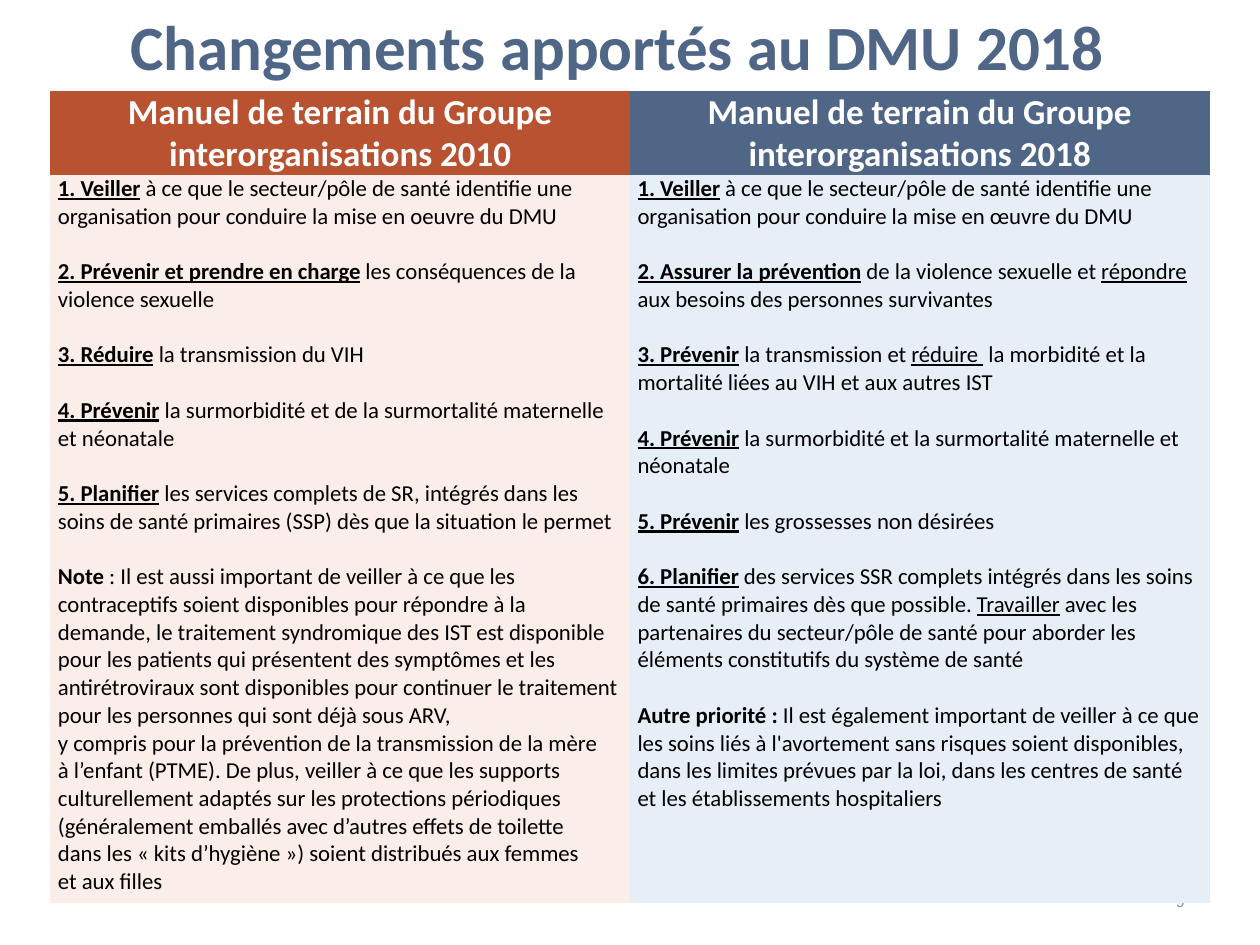
from dataclasses import dataclass

from pptx import Presentation
from pptx import util as u
from pptx.dml import color
from pptx.enum import text

TITLE = "Changements apportés au DMU 2018"
PAGE_NUMBER = "9"
PLAIN, BOLD, UNDERLINED, KEY = (False, False), (True, False), (False, True), (True, True)

COLUMNS = [
    {
        "heading": "Manuel de terrain du Groupe interorganisations 2010",
        "dark": "B85231",
        "light": "FBEDE7",
        "objectives": [
            [("1. Veiller", KEY), (" à ce que le secteur/pôle de santé identifie une organisation "
                                   "pour conduire la mise en oeuvre du DMU", PLAIN)],
            [("2. Prévenir et prendre en charge", KEY),
             (" les conséquences de la violence sexuelle", PLAIN)],
            [("3. Réduire", KEY), (" la transmission du VIH", PLAIN)],
            [("4. Prévenir", KEY),
             (" la surmorbidité et de la surmortalité maternelle et néonatale", PLAIN)],
            [("5. Planifier", KEY), (" les services complets de SR, intégrés dans les soins de santé "
                                     "primaires (SSP) dès que la situation le permet", PLAIN)],
            [("Note ", BOLD),
             (": Il est aussi important de veiller à ce que les contraceptifs soient disponibles "
              "pour répondre à la demande, le traitement syndromique des IST est disponible pour "
              "les patients qui présentent des symptômes et les antirétroviraux sont disponibles "
              "pour continuer le traitement pour les personnes qui sont déjà sous ARV, \n"
              "y compris pour la prévention de la transmission de la mère \n"
              "à l’enfant (PTME). De plus, veiller à ce que les supports culturellement adaptés "
              "sur les protections périodiques (généralement emballés avec d’autres effets de "
              "toilette \ndans les « kits d’hygiène ») soient distribués aux femmes \n"
              "et aux filles", PLAIN)],
        ],
    },
    {
        "heading": "Manuel de terrain du Groupe interorganisations 2018",
        "dark": "506687",
        "light": "E6EFF8",
        "objectives": [
            [("1. Veiller", KEY), (" à ce que le secteur/pôle de santé identifie une organisation "
                                   "pour conduire la mise en œuvre du DMU", PLAIN)],
            [("2. Assurer la prévention", KEY), (" de la violence sexuelle et ", PLAIN),
             ("répondre", UNDERLINED), (" aux besoins des personnes survivantes", PLAIN)],
            [("3. Prévenir", KEY), (" la transmission et ", PLAIN), ("réduire ", UNDERLINED),
             (" la morbidité et la mortalité liées au VIH et aux autres IST", PLAIN)],
            [("4. Prévenir", KEY),
             (" la surmorbidité et la surmortalité maternelle et néonatale", PLAIN)],
            [("5. Prévenir", KEY), (" les grossesses non désirées", PLAIN)],
            [("6. Planifier", KEY), (" des services SSR complets intégrés dans les soins de santé "
                                     "primaires dès que possible. ", PLAIN),
             ("Travailler", UNDERLINED), (" avec les partenaires du secteur/pôle de santé pour "
                                          "aborder les éléments constitutifs du système de santé", PLAIN)],
            [("Autre priorité : ", BOLD),
             ("Il est également important de veiller à ce que les soins liés à l'avortement sans "
              "risques soient disponibles, dans les limites prévues par la loi, dans les centres "
              "de santé et les établissements hospitaliers", PLAIN)],
        ],
    },
]


@dataclass(frozen=True)
class Theme:
    font: str = "Calibri"
    number_font: str = "Arial"
    title: str = "506687"
    heading: str = "FFFFFF"
    body: str = "000000"
    number: str = "888888"
    title_size: float = 36
    heading_size: float = 20
    body_size: float = 13
    number_size: float = 9
    paragraph_gap: float = 15.85
    plain_table_style: str = "{2D5ABB26-0587-4C30-8999-92F81FD0307C}"


THEME = Theme()
WIDTH, HEIGHT = u.Inches(10), u.Inches(7.5)
MARGIN = int(WIDTH * 0.04)
TITLE_HEIGHT = u.Inches(0.72)
TABLE_WIDTH = WIDTH - 2 * MARGIN
ROW_HEIGHTS = [u.Inches(0.65), u.Inches(5.78)]


def format_paragraph(paragraph, size, hex_color, alignment, bold=False, font=THEME.font):
    paragraph.alignment = alignment
    paragraph.font.name = font
    paragraph.font.size = u.Pt(size)
    paragraph.font.bold = bold
    paragraph.font.color.rgb = color.RGBColor.from_string(hex_color)


def add_runs(paragraph, runs):
    for content, (bold, underline) in runs:
        for index, line in enumerate(content.split("\n")):
            if index:
                paragraph.add_line_break()
            run = paragraph.add_run()
            run.text = line
            if bold:
                run.font.bold = True
            if underline:
                run.font.underline = True


def prepare_cell(cell, fill):
    cell.fill.solid()
    cell.fill.fore_color.rgb = color.RGBColor.from_string(fill)
    cell.margin_left = cell.margin_right = u.Inches(0.06)
    cell.margin_top = cell.margin_bottom = 0
    return cell.text_frame


def add_title(slide):
    title = slide.shapes.title
    title.left, title.top, title.width, title.height = MARGIN, 0, u.Inches(9), TITLE_HEIGHT
    title.text_frame.text = TITLE
    title.text_frame.vertical_anchor = text.MSO_ANCHOR.MIDDLE
    format_paragraph(title.text_frame.paragraphs[0], THEME.title_size, THEME.title,
                     text.PP_ALIGN.CENTER, bold=True)


def add_page_number(slide):
    box = slide.shapes.add_textbox(u.Inches(7.17), u.Inches(6.95), u.Inches(2.33), u.Inches(0.4))
    frame = box.text_frame
    frame.word_wrap = True
    frame.vertical_anchor = text.MSO_ANCHOR.MIDDLE
    frame.text = PAGE_NUMBER
    format_paragraph(frame.paragraphs[0], THEME.number_size, THEME.number,
                     text.PP_ALIGN.RIGHT, font=THEME.number_font)


def add_comparison(slide):
    graphic = slide.shapes.add_table(len(ROW_HEIGHTS), len(COLUMNS), MARGIN, TITLE_HEIGHT,
                                     TABLE_WIDTH, sum(ROW_HEIGHTS))
    graphic.element.xpath(".//a:tableStyleId")[0].text = THEME.plain_table_style
    table = graphic.table
    table.horz_banding = False
    for row, height in zip(table.rows, ROW_HEIGHTS):
        row.height = height
    for index, column in enumerate(COLUMNS):
        heading = prepare_cell(table.cell(0, index), column["dark"])
        heading.text = column["heading"]
        format_paragraph(heading.paragraphs[0], THEME.heading_size, THEME.heading,
                         text.PP_ALIGN.CENTER, bold=True)
        body = prepare_cell(table.cell(1, index), column["light"])
        for position, runs in enumerate(column["objectives"]):
            paragraph = body.add_paragraph() if position else body.paragraphs[0]
            format_paragraph(paragraph, THEME.body_size, THEME.body, text.PP_ALIGN.LEFT)
            if position:
                paragraph.space_before = u.Pt(THEME.paragraph_gap)
            add_runs(paragraph, runs)


def main():
    presentation = Presentation()
    presentation.slide_width, presentation.slide_height = WIDTH, HEIGHT
    slide = presentation.slides.add_slide(presentation.slide_layouts[5])
    add_title(slide)
    add_page_number(slide)
    add_comparison(slide)
    presentation.save("out.pptx")


if __name__ == "__main__":
    main()
